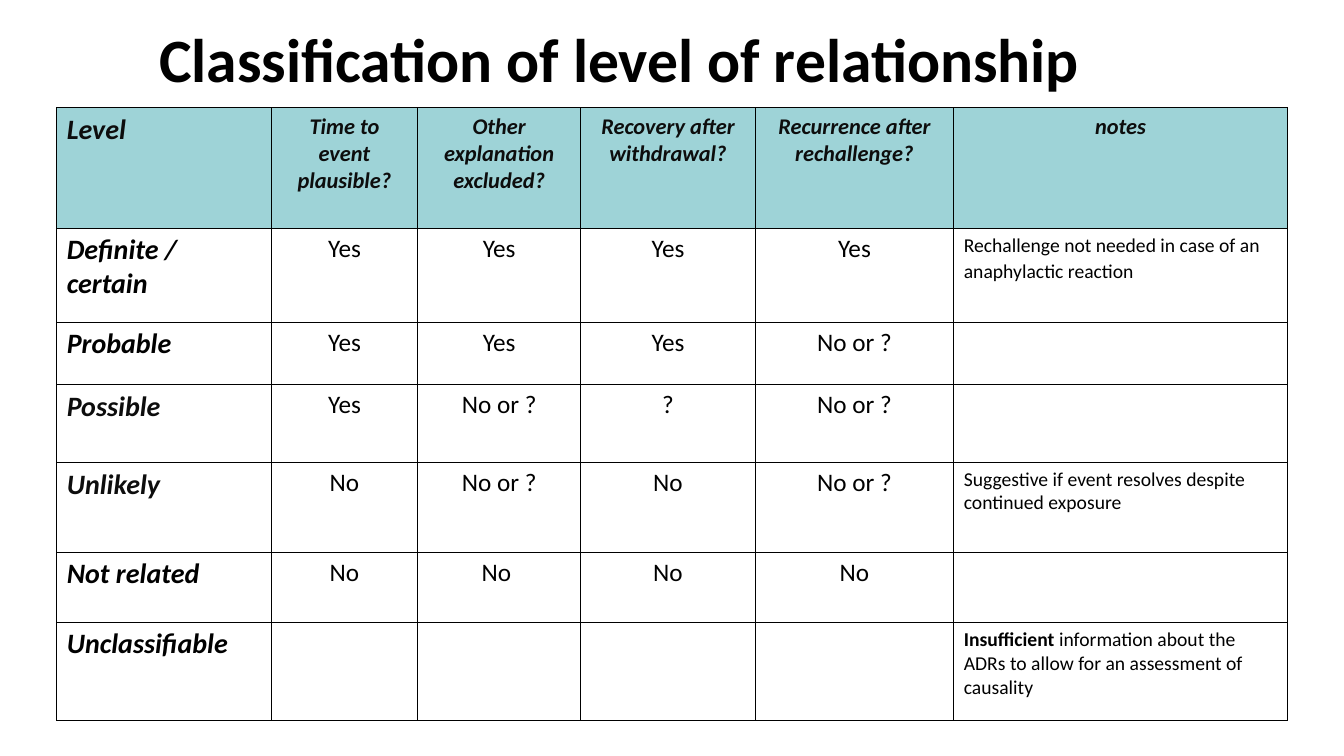
from dataclasses import dataclass

from lxml import etree
from pptx import Presentation
from pptx.dml.color import RGBColor
from pptx.enum.text import MSO_ANCHOR, PP_ALIGN
from pptx.oxml.ns import qn
from pptx.util import Pt

CENTER, LEFT = PP_ALIGN.CENTER, PP_ALIGN.LEFT
MIDDLE, TOP = MSO_ANCHOR.MIDDLE, MSO_ANCHOR.TOP
TITLE_ONLY = 5


@dataclass(frozen=True)
class Theme:
    font: str = "Calibri"
    black: str = "000000"
    soft_black: str = "0D0D0D"
    header_fill: str = "9ED3D7"
    title_size: int = 44
    level_size: int = 20
    answer_size: int = 18
    heading_size: int = 16
    note_size: int = 14
    level_spacing: int = 24
    border_width: int = 1


THEME = Theme()


@dataclass(frozen=True)
class Run:
    text: str
    size: int
    color: str = THEME.black
    bold: bool = False
    italic: bool = False


@dataclass(frozen=True)
class Level:
    name: str
    height: float
    answers: tuple[str, ...]
    notes: tuple[Run, ...] = ()
    color: str = THEME.black
    fixed_spacing: bool = True


# Content
TITLE = "Classification of level of relationship"
QUESTIONS = (
    "Time to event plausible?", "Other explanation excluded?",
    "Recovery after withdrawal?", "Recurrence after rechallenge?", "notes",
)
HEADER_HEIGHT = 86.4
COLUMN_WIDTHS = (153.36, 104.4, 116.64, 124.56, 141.84, 238.32)
NO_ANSWERS = ("",) * 4
LEVELS = (
    Level("Definite / certain", 66.96, ("Yes",) * 4,
          (Run("Rechallenge not needed in case of an anaphylactic reaction", THEME.note_size),
           Run(" ", THEME.heading_size))),
    Level("Probable", 44.64, ("Yes", "Yes", "Yes", "No or ?")),
    Level("Possible", 55.44, ("Yes", "No or ?", "?", "No or ?"),
          color=THEME.soft_black, fixed_spacing=False),
    Level("Unlikely", 64.08, ("No", "No or ?", "No", "No or ?"),
          (Run("Suggestive if event resolves despite continued exposure", THEME.note_size),),
          color=THEME.soft_black, fixed_spacing=False),
    Level("Not related", 50.4, ("No", "No ", "No", "No")),
    Level("Unclassifiable", 69.84, NO_ANSWERS,
          (Run("Insufficient ", THEME.note_size, bold=True),
           Run("information about the ADRs to allow for an assessment of causality",
               THEME.note_size))),
)


def apply_format(target, values: dict) -> None:
    for attribute, value in values.items():
        setattr(target, attribute, value)


def write_runs(paragraph, runs: tuple[Run, ...], align=LEFT) -> None:
    paragraph.alignment = align
    for item in runs:
        run = paragraph.add_run()
        run.text = item.text
        apply_format(run.font, {"name": THEME.font, "size": Pt(item.size),
                                "bold": item.bold, "italic": item.italic})
        run.font.color.rgb = RGBColor.from_string(item.color)


def draw_borders(cell) -> None:
    properties = cell._tc.get_or_add_tcPr()
    for side in ("a:lnL", "a:lnR", "a:lnT", "a:lnB"):
        line = etree.SubElement(properties, qn(side), w=str(Pt(THEME.border_width)))
        fill = etree.SubElement(line, qn("a:solidFill"))
        etree.SubElement(fill, qn("a:srgbClr"), val=THEME.black)


def fill_cell(cell, runs: tuple[Run, ...], align=LEFT, fill: str = "") -> None:
    draw_borders(cell)
    if fill:
        cell.fill.solid()
        cell.fill.fore_color.rgb = RGBColor.from_string(fill)
    else:
        cell.fill.background()
    cell.vertical_anchor = TOP
    write_runs(cell.text_frame.paragraphs[0], runs, align)


def add_title(slide) -> None:
    title = slide.shapes.title
    apply_format(title, {"left": Pt(88.56), "top": Pt(5.04),
                         "width": Pt(708.48), "height": Pt(72)})
    apply_format(title.text_frame, {"word_wrap": True, "vertical_anchor": MIDDLE})
    write_runs(title.text_frame.paragraphs[0],
               (Run(TITLE, THEME.title_size, bold=True),), CENTER)


def add_level_table(slide) -> None:
    heights = (HEADER_HEIGHT, *(level.height for level in LEVELS))
    table = slide.shapes.add_table(
        len(heights), len(COLUMN_WIDTHS), Pt(40.5), Pt(76.9),
        Pt(sum(COLUMN_WIDTHS)), Pt(sum(heights))).table
    apply_format(table, {"first_row": False, "horz_banding": False})
    for column, width in zip(table.columns, COLUMN_WIDTHS):
        column.width = Pt(width)
    for row, height in zip(table.rows, heights):
        row.height = Pt(height)

    # Header row
    fill_cell(table.cell(0, 0),
              (Run("Level", THEME.level_size, THEME.soft_black, True, True),),
              fill=THEME.header_fill)
    for column, question in enumerate(QUESTIONS, 1):
        heading = Run(question, THEME.heading_size, THEME.soft_black, True, True)
        fill_cell(table.cell(0, column), (heading,), CENTER, THEME.header_fill)

    # One row per level
    for row, level in enumerate(LEVELS, 1):
        name_cell = table.cell(row, 0)
        fill_cell(name_cell, (Run(level.name, THEME.level_size, level.color, True, True),))
        if level.fixed_spacing:
            name_cell.text_frame.paragraphs[0].line_spacing = Pt(THEME.level_spacing)
        for column, answer in enumerate(level.answers, 1):
            runs = (Run(answer, THEME.answer_size),) if answer else ()
            fill_cell(table.cell(row, column), runs, CENTER)
        fill_cell(table.cell(row, len(QUESTIONS)), level.notes)


def main() -> None:
    presentation = Presentation()
    apply_format(presentation, {"slide_width": Pt(960), "slide_height": Pt(540)})
    slide = presentation.slides.add_slide(presentation.slide_layouts[TITLE_ONLY])
    add_title(slide)
    add_level_table(slide)
    presentation.save("out.pptx")


if __name__ == "__main__":
    main()
